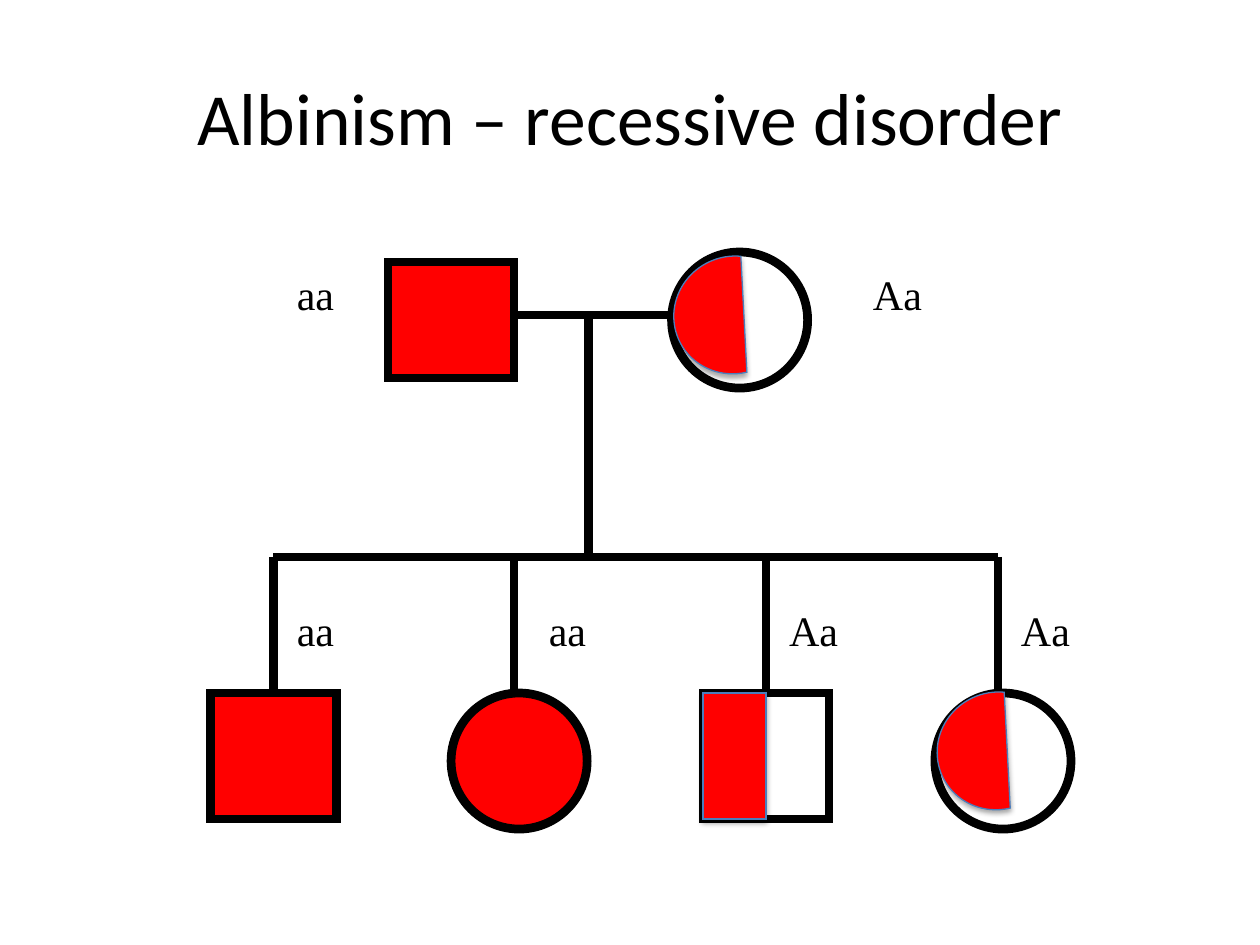
"""Build a pedigree chart slide for albinism, a recessive disorder."""
from lxml import etree
from pptx import Presentation
from pptx import util as u
from pptx.dml.color import RGBColor
from pptx.enum import shapes, text
from pptx.oxml import ns

BLACK, RED, BLUE = "000000", "FF0000", "4B7EBC"
SHAPE, ALIGN = shapes.MSO_SHAPE, text.PP_ALIGN
TITLE = "Albinism – recessive disorder"
SIBLING_Y, CHILD_Y, PARENT_Y = 4.42, 5.5, 2.5
MIDDLE_X = 4.67

PEOPLE = [
    (SHAPE.RECTANGLE, 3.08, 2.08, 1, 0.92, RED),
    (SHAPE.OVAL, 5.33, 2, 1.08, 1.08, None),
    (SHAPE.RECTANGLE, 1.67, CHILD_Y, 1, 1, RED),
    (SHAPE.OVAL, 3.58, CHILD_Y, 1.08, 1.08, RED),
    (SHAPE.RECTANGLE, 5.58, CHILD_Y, 1, 1, None),
    (SHAPE.OVAL, 7.42, CHILD_Y, 1.08, 1.08, None),
]
CHILD_X = [2.17, 4.08, 6.08, 7.92]
LINES = [
    (4.08, PARENT_Y, 5.33, PARENT_Y),
    (MIDDLE_X, PARENT_Y, MIDDLE_X, SIBLING_Y),
    (CHILD_X[0], SIBLING_Y, CHILD_X[-1], SIBLING_Y),
] + [(x, SIBLING_Y, x, CHILD_Y) for x in CHILD_X]
GENOTYPES = [
    ("aa", 1.58, 2.08, ALIGN.RIGHT),
    ("Aa", 6.83, 2.08, ALIGN.LEFT),
    ("aa", 1.58, 4.75, ALIGN.RIGHT),
    ("aa", 3.58, 4.75, ALIGN.RIGHT),
    ("Aa", 5.58, 4.75, ALIGN.RIGHT),
    ("Aa", 7.42, 4.75, ALIGN.RIGHT),
]
CARRIER_CHORDS = [(5.36, 2.02), (7.45, 5.48)]


def color(value):
    return RGBColor.from_string(value)


def add_element(parent, tag, **attributes):
    return etree.SubElement(parent, ns.qn(tag), attributes)


def style_line(line, value, width):
    line.color.rgb = color(value)
    line.width = u.Pt(width)


def add_symbol(slide, kind, left, top, width, height, fill, line=BLACK, weight=5):
    shape = slide.shapes.add_shape(kind, *map(u.Inches, (left, top, width, height)))
    shape.shadow.inherit = False
    if fill:
        shape.fill.solid()
        shape.fill.fore_color.rgb = color(fill)
    else:
        shape.fill.background()
    style_line(shape.line, line, weight)
    add_element(shape.line._get_or_add_ln(), "a:miter", lim="800000")
    return shape


def add_carrier_half(slide, kind, left, top, width, height):
    shape = add_symbol(slide, kind, left, top, width, height, RED, BLUE, 0.75)
    effects = shape._element.spPr.find(ns.qn("a:effectLst"))
    shadow = add_element(effects, "a:outerShdw", blurRad=str(u.Pt(3.1)),
                         dist=str(u.Pt(1.8)), dir="5400000", rotWithShape="0")
    add_element(add_element(shadow, "a:srgbClr", val=BLACK), "a:alpha", val="35000")
    return shape


def add_line(slide, *ends):
    line = slide.shapes.add_connector(shapes.MSO_CONNECTOR.STRAIGHT, *map(u.Inches, ends))
    style_line(line.line, BLACK, 5)
    add_element(line._element.spPr, "a:effectLst")


def add_text(slide, words, left, top, width, height, align, font, size, anchor):
    box = slide.shapes.add_textbox(*map(u.Inches, (left, top, width, height)))
    frame = box.text_frame
    frame.word_wrap = True
    frame.vertical_anchor = anchor
    paragraph = frame.paragraphs[0]
    paragraph.text = words
    paragraph.alignment = align
    paragraph.font.name = font
    paragraph.font.size = u.Pt(size)
    paragraph.font.color.rgb = color(BLACK)


def main():
    presentation = Presentation()
    presentation.slide_width, presentation.slide_height = u.Inches(10), u.Inches(7.5)
    slide = presentation.slides.add_slide(presentation.slide_layouts[6])
    add_text(slide, TITLE, 0.5, 0.3, 9, 1.25, ALIGN.CENTER, "Calibri", 42,
             text.MSO_ANCHOR.MIDDLE)
    for person in PEOPLE:
        add_symbol(slide, *person)
    for ends in LINES:
        add_line(slide, *ends)
    for words, left, top, align in GENOTYPES:
        add_text(slide, words, left, top, 1.17, 0.5, align, "Times New Roman", 24,
                 text.MSO_ANCHOR.TOP)
    for left, top in CARRIER_CHORDS:
        chord = add_carrier_half(slide, SHAPE.CHORD, left, top, 0.93, 0.96)
        chord.adjustments[0], chord.adjustments[1] = 6.82, 126.49
        chord.rotation = 65.9
    add_carrier_half(slide, SHAPE.RECTANGLE, 5.58, CHILD_Y, 0.5, 1)
    presentation.save("out.pptx")


if __name__ == "__main__":
    main()
